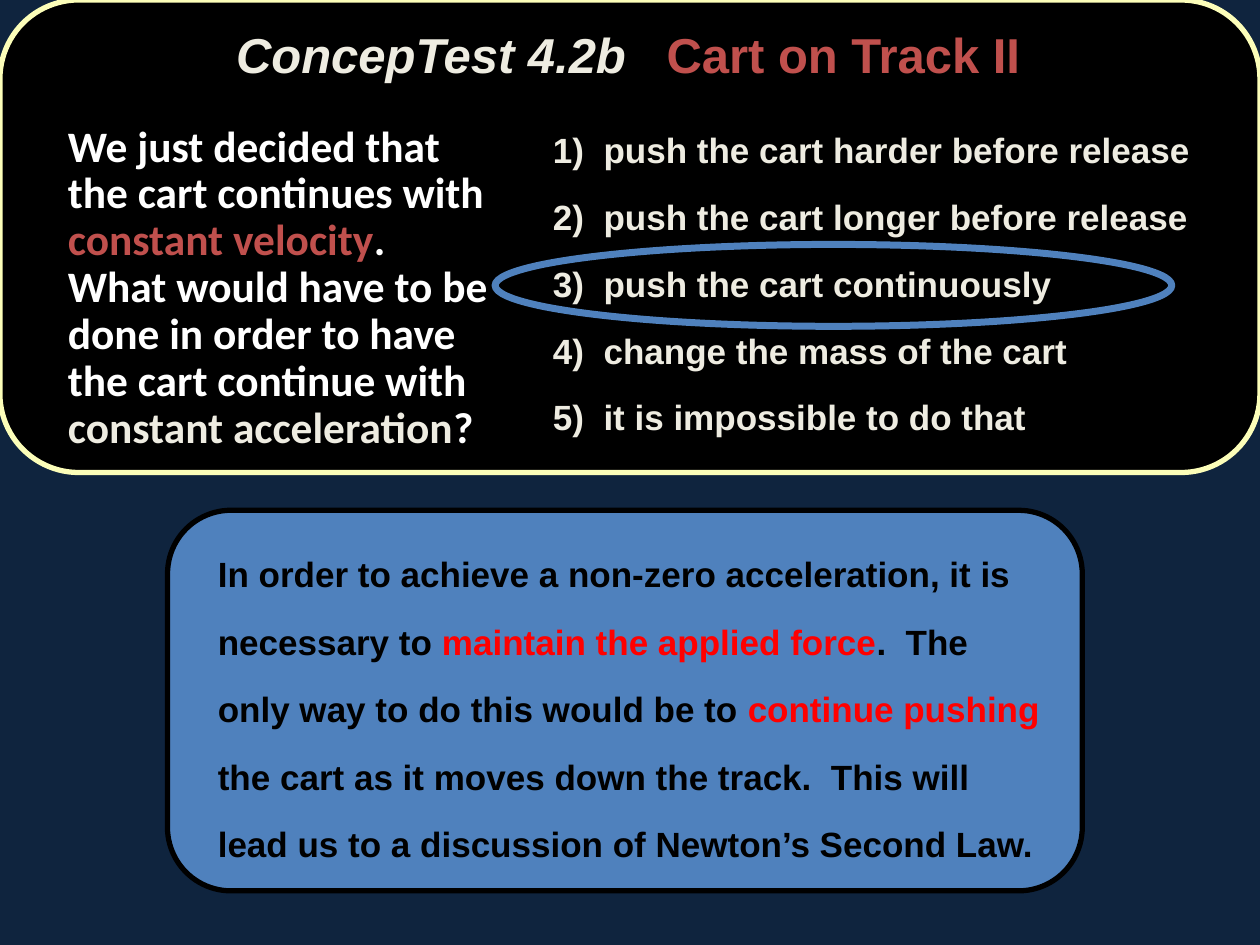
import pptx
import pptx.dml.color
import pptx.enum.shapes
import pptx.enum.text
import pptx.util

Inches = pptx.util.Inches
Pt = pptx.util.Pt
SHAPES = pptx.enum.shapes.MSO_SHAPE
ALIGN = pptx.enum.text.PP_ALIGN
ANCHOR = pptx.enum.text.MSO_ANCHOR

BLACK, WHITE, CREAM = "000000", "FFFFFF", "EEECE1"
BLUE, BRICK, RED = "4F81BD", "C0504D", "FF0000"
NAVY, PALE_YELLOW = "0F243E", "FCFEB9"
HANGING = Inches(0.44)


def colour(hex_value):
    return pptx.dml.color.RGBColor.from_string(hex_value)


def set_values(target, values):
    for name, value in values.items():
        setattr(target, name, value)


class SlideBuilder:
    """Holds the text style and the slide being built."""

    def __init__(self, slide, font_format):
        self.slide = slide
        self.font_format = font_format

    def background(self, fill):
        self.slide.background.fill.solid()
        self.slide.background.fill.fore_color.rgb = colour(fill)

    def shape(self, kind, box, line, width, fill=None):
        shape = self.slide.shapes.add_shape(kind, *map(Inches, box))
        shape.shadow.inherit = False
        if fill:
            shape.fill.solid()
            shape.fill.fore_color.rgb = colour(fill)
        else:
            shape.fill.background()
        shape.line.color.rgb = colour(line)
        shape.line.width = Pt(width)

    def text(self, box, paragraphs, paragraph_format, hanging=True,
             anchor=ANCHOR.TOP):
        """Each paragraph is a list of (text, colour, font changes) runs."""
        frame = self.slide.shapes.add_textbox(*map(Inches, box)).text_frame
        set_values(frame, {"word_wrap": True, "vertical_anchor": anchor})
        for index, runs in enumerate(paragraphs):
            paragraph = frame.add_paragraph() if index else frame.paragraphs[0]
            set_values(paragraph, paragraph_format)
            if hanging:
                properties = paragraph._p.get_or_add_pPr()
                properties.set("marL", str(HANGING))
                properties.set("indent", str(-HANGING))
            for text, text_colour, changes in runs:
                run = paragraph.add_run()
                run.text = text
                set_values(run.font, {**self.font_format, **changes})
                run.font.color.rgb = colour(text_colour)


def main():
    presentation = pptx.Presentation()
    set_values(presentation, {"slide_width": Inches(10),
                              "slide_height": Inches(7.5)})
    slide = presentation.slides.add_slide(presentation.slide_layouts[6])
    builder = SlideBuilder(
        slide, {"name": "Arial", "size": Pt(20), "bold": True})
    builder.background(NAVY)

    # Explanation panel
    builder.shape(SHAPES.ROUNDED_RECTANGLE, (1.33, 4.05, 7.26, 3.02),
                  BLACK, 3, BLUE)
    builder.text((1.19, 4.09, 7.18, 2.18), [[
        ("\t", BLACK, {"size": Pt(22)}),
        ("In order to achieve a non-zero acceleration, it is necessary to ",
         BLACK, {}),
        ("maintain the applied force", RED, {}),
        (".  The only way to do this would be to ", BLACK, {}),
        ("continue pushing", RED, {}),
        (" the cart as it moves down the track.  This will lead us to a "
         "discussion of Newton’s Second Law.", BLACK, {}),
    ]], {"line_spacing": 1.6})

    # Question panel and title
    builder.shape(SHAPES.ROUNDED_RECTANGLE, (0, 0, 10, 3.75),
                  PALE_YELLOW, 3, BLACK)
    title = {"size": Pt(28)}
    builder.text((0.86, 0, 8.25, 0.92), [[
        ("ConcepTest 4.2b   ", CREAM, {**title, "italic": True}),
        ("Cart on Track II", BRICK, title),
    ]], {"line_spacing": 0.9, "alignment": ALIGN.CENTER},
        hanging=False, anchor=ANCHOR.MIDDLE)

    # Ring around the correct answer
    builder.shape(SHAPES.OVAL, (3.93, 1.94, 5.37, 0.65), BLUE, 4)

    # Question
    question = {"name": "Calibri", "size": Pt(24.8)}
    builder.text((0, 0.94, 4.07, 2.83), [[
        ("\tWe just decided that the cart continues with ", WHITE, question),
        ("constant velocity", BRICK, question),
        (".  What would have to be done in order to have the cart continue "
         "with ", WHITE, question),
        ("constant acceleration", CREAM, question),
        ("?", WHITE, question),
    ]], {"line_spacing": 0.9})

    # Answer choices
    answers = ["push the cart harder before release",
               "push the cart longer before release",
               "push the cart continuously",
               "change the mass of the cart",
               "it is impossible to do that"]
    builder.text((4.29, 0.87, 5.71, 2.73),
                 [[(f"{number})  {answer}", CREAM, {})]
                  for number, answer in enumerate(answers, 1)],
                 {"line_spacing": 1.3, "space_before": Pt(7)})

    presentation.save("out.pptx")


if __name__ == "__main__":
    main()
